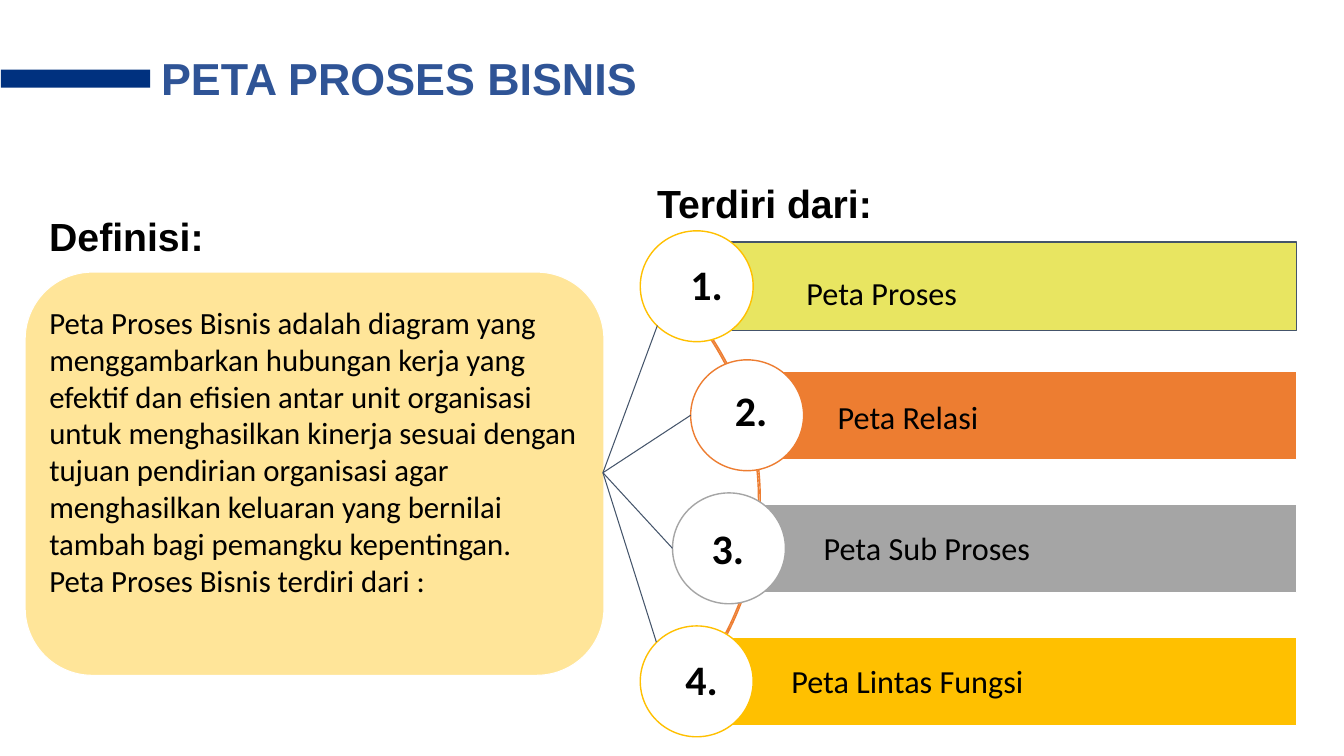
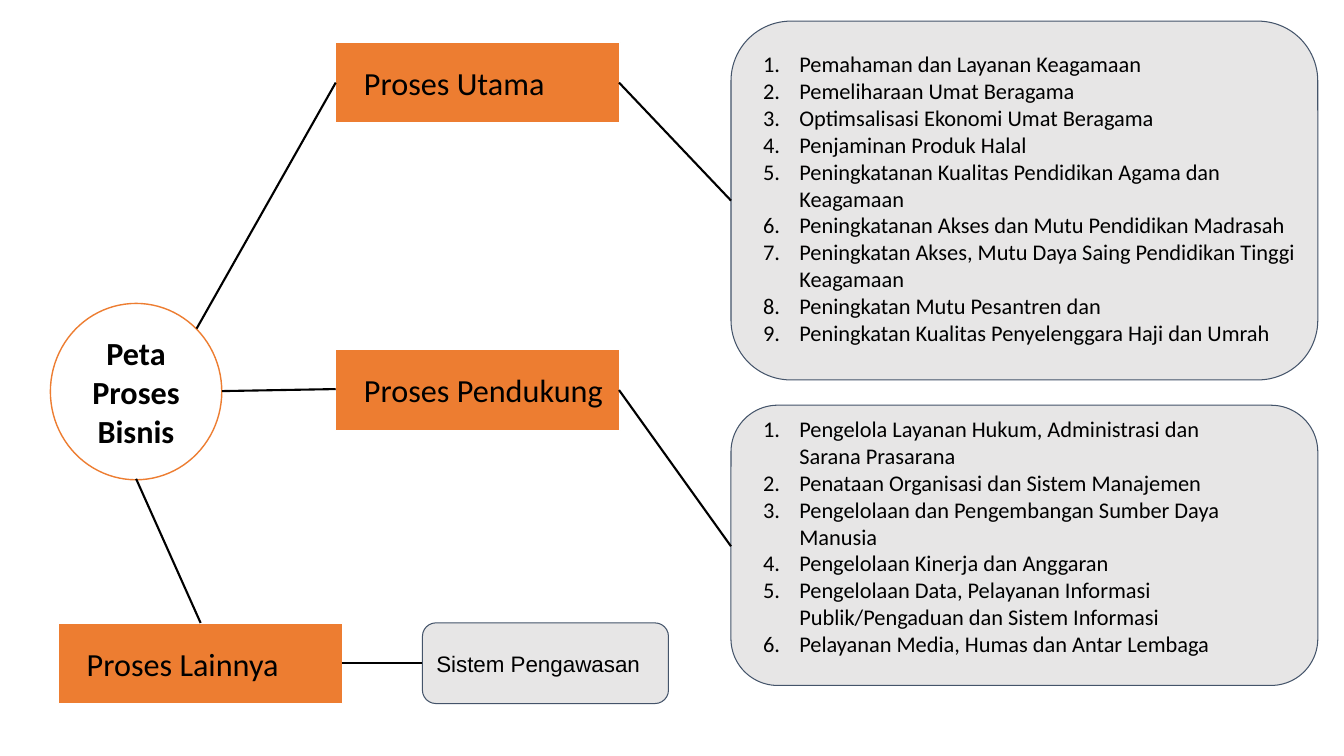
from dataclasses import dataclass
from typing import Optional

from lxml.etree import SubElement
from pptx import Presentation
from pptx.dml.color import RGBColor
from pptx.enum.shapes import MSO_CONNECTOR, MSO_SHAPE
from pptx.enum.text import MSO_ANCHOR, PP_ALIGN
from pptx.oxml.ns import qn
from pptx.shapes.autoshape import Shape
from pptx.slide import Slide
from pptx.util import Emu, Pt

PX = 9144  # EMU in one px, 100 px to the inch
WIDTH, HEIGHT = 1333, 750

BLACK, WHITE = "000000", "FFFFFF"
TITLE_BLUE, BAND_BLUE, SLATE = "2F5496", "00317F", "44546A"
ORANGE, GREY, GOLD, LIME = "ED7D31", "A5A5A5", "FFC000", "E8E561"
CREAM, PALE = "FFE599", "E7E6E6"

Box = tuple[int, int, int, int]
Point = tuple[int, int]


@dataclass(frozen=True)
class Style:
    size: int
    font: str = "Calibri"
    bold: bool = False
    colour: str = BLACK


TITLE = Style(32, "Arial", True, TITLE_BLUE)
HEADING = Style(28, "Arial", True)
NUMBER = Style(30, bold=True)
LABEL = Style(23)
CENTRE = Style(23, bold=True)
DEFINITION = Style(22)
LISTED = Style(16)
SUPERVISION = Style(16, "Arial")


@dataclass(frozen=True)
class MapKind:
    label: str
    fill: str
    edge: str
    ring: str
    top: int
    circle_left: int
    label_at: Point
    number_at: Point
    spoke_end: Point


MAP_KINDS = [
    MapKind("Peta Proses", LIME, SLATE, GOLD, 240, 635, (790, 261), (675, 246), (652, 323)),
    MapKind("Peta Relasi", ORANGE, WHITE, ORANGE, 368, 685, (821, 384), (719, 371), (685, 412)),
    MapKind("Peta Sub Proses", GREY, WHITE, GREY, 500, 667, (807, 514), (696, 508), (667, 544)),
    MapKind("Peta Lintas Fungsi", GOLD, WHITE, GOLD, 632, 635, (775, 646), (670, 638), (651, 637)),
]
BAR_RIGHT, BAR_HEIGHT = 1286, 88
CIRCLE_W, CIRCLE_H = 112, 110


@dataclass(frozen=True)
class Process:
    label: str
    left: int
    top: int


PROCESSES = [
    Process("Proses Utama", 333, 42),
    Process("Proses Pendukung", 333, 347),
    Process("Proses Lainnya", 58, 618),
]
PROCESS_W, PROCESS_H = 282, 80


@dataclass(frozen=True)
class Panel:
    outline: Box
    text_area: Box
    entries: list[str]


PANELS = [
    Panel((725, 21, 582, 356), (733, 40, 582, 316), [
        "Pemahaman dan Layanan Keagamaan",
        "Pemeliharaan Umat Beragama",
        "Optimsalisasi Ekonomi Umat Beragama",
        "Penjaminan Produk Halal",
        "Peningkatanan Kualitas Pendidikan Agama dan Keagamaan",
        "Peningkatanan Akses dan Mutu Pendidikan Madrasah",
        "Peningkatan Akses, Mutu Daya Saing Pendidikan Tinggi Keagamaan",
        "Peningkatan Mutu Pesantren dan",
        "Peningkatan Kualitas Penyelenggara Haji dan Umrah",
    ]),
    Panel((725, 402, 582, 278), (733, 402, 530, 263), [
        "Pengelola Layanan Hukum, Administrasi dan Sarana Prasarana",
        "Penataan Organisasi dan Sistem Manajemen",
        "Pengelolaan dan Pengembangan Sumber Daya Manusia",
        "Pengelolaan Kinerja dan Anggaran",
        "Pengelolaan Data, Pelayanan Informasi Publik/Pengaduan dan Sistem Informasi",
        "Pelayanan Media, Humas dan Antar Lembaga",
    ]),
]
BRANCHES: list[tuple[Point, Point]] = [
    ((333, 82), (195, 326)),
    ((220, 388), (333, 386)),
    ((135, 475), (199, 618)),
    ((614, 82), (725, 199)),
    ((614, 387), (725, 542)),
    ((339, 658), (419, 658)),
]


def px(length: int) -> Emu:
    return Emu(length * PX)


def rgb(colour: str) -> RGBColor:
    return RGBColor.from_string(colour)


def add_block(slide: Slide, preset: MSO_SHAPE, box: Box, fill: Optional[str],
              edge: Optional[str] = None, weight: float = 1) -> Shape:
    """Draw a preset shape; None leaves out its fill or its edge."""
    block = slide.shapes.add_shape(preset, *map(px, box))
    block.shadow.inherit = False
    if fill:
        block.fill.solid()
        block.fill.fore_color.rgb = rgb(fill)
    else:
        block.fill.background()
    if edge:
        block.line.color.rgb = rgb(edge)
        block.line.width = Pt(weight)
    else:
        block.line.fill.background()
    return block


def write(block: Shape, lines: list[str], style: Style, *,
          anchor: MSO_ANCHOR = MSO_ANCHOR.MIDDLE, align: PP_ALIGN = PP_ALIGN.LEFT,
          left_inset: int = 10, inset: int = 10,
          first_indent: int = 0, numbered: bool = False) -> None:
    frame = block.text_frame
    frame.word_wrap = True
    frame.vertical_anchor = anchor
    frame.margin_left = px(left_inset)
    frame.margin_right = px(10)
    frame.margin_top = frame.margin_bottom = px(inset)
    for index, line in enumerate(lines):
        paragraph = frame.add_paragraph() if index else frame.paragraphs[0]
        paragraph.text = line
        paragraph.alignment = align
        properties = paragraph._p.get_or_add_pPr()
        if numbered:
            properties.set("marL", str(px(50)))
            properties.set("indent", str(px(-36)))
            SubElement(properties, qn("a:buAutoNum"), type="arabicPeriod")
        elif first_indent:
            properties.set("marL", "0")
            properties.set("indent", str(px(first_indent)))
        font = paragraph.font
        font.name, font.size, font.bold = style.font, Pt(style.size), style.bold
        font.color.rgb = rgb(style.colour)


def add_text(slide: Slide, box: Box, lines: list[str], style: Style, *,
             anchor: MSO_ANCHOR = MSO_ANCHOR.TOP, inset: int = 10,
             numbered: bool = False) -> None:
    write(slide.shapes.add_textbox(*map(px, box)), lines, style,
          anchor=anchor, inset=inset, numbered=numbered)


def add_line(slide: Slide, start: Point, end: Point, colour: str, weight: float) -> None:
    line = slide.shapes.add_connector(MSO_CONNECTOR.STRAIGHT, *map(px, start + end))
    line.line.color.rgb = rgb(colour)
    line.line.width = Pt(weight)
    SubElement(line._element.spPr, qn("a:effectLst"))


def add_title(slide: Slide, title: str) -> None:
    """Draw the title area and the dark band leading into it."""
    area = add_block(slide, MSO_SHAPE.RECTANGLE, (0, -13, WIDTH, 179), WHITE, WHITE, 0.75)
    write(area, [title], TITLE, first_indent=150)
    add_block(slide, MSO_SHAPE.RECTANGLE, (1, 69, 148, 18), BAND_BLUE)


def add_map_kind(slide: Slide, kind: MapKind) -> None:
    bar_left = kind.circle_left + CIRCLE_W // 2
    add_block(slide, MSO_SHAPE.RECTANGLE,
              (bar_left, kind.top, BAR_RIGHT - bar_left, BAR_HEIGHT), kind.fill, kind.edge)
    circle_top = kind.top - (CIRCLE_H - BAR_HEIGHT) // 2
    add_block(slide, MSO_SHAPE.OVAL,
              (kind.circle_left, circle_top, CIRCLE_W, CIRCLE_H), WHITE, kind.ring)
    add_text(slide, (*kind.label_at, 341, 59), [kind.label], LABEL, anchor=MSO_ANCHOR.MIDDLE)


def build_definition(slide: Slide) -> None:
    add_block(slide, MSO_SHAPE.ROUNDED_RECTANGLE, (25, 270, 574, 400), CREAM, WHITE, 0.75)
    add_title(slide, "PETA PROSES BISNIS")
    add_text(slide, (39, 291, 559, 357), [
        "Peta Proses Bisnis adalah diagram yang menggambarkan hubungan kerja yang efektif "
        "dan efisien antar unit organisasi untuk menghasilkan kinerja sesuai dengan tujuan "
        "pendirian organisasi agar menghasilkan keluaran yang bernilai tambah bagi "
        "pemangku kepentingan.",
        "Peta Proses Bisnis terdiri dari :",
    ], DEFINITION)

    arc = add_block(slide, MSO_SHAPE.BLOCK_ARC, (149, 199, 605, 592), None, ORANGE)
    for index, value in enumerate((192.04, 27, 0.003)):
        arc.adjustments[index] = value
    for number, kind in enumerate(MAP_KINDS, 1):
        add_map_kind(slide, kind)
        add_text(slide, (*kind.number_at, 63, 71), [f"{number}."], NUMBER)
        add_line(slide, (598, 469), kind.spoke_end, SLATE, 0.75)

    add_text(slide, (39, 206, 283, 57), ["Definisi:"], HEADING, inset=5)
    add_text(slide, (642, 173, 247, 57), ["Terdiri dari:"], HEADING, inset=5)


def build_process_tree(slide: Slide) -> None:
    for process in PROCESSES:
        block = add_block(slide, MSO_SHAPE.RECTANGLE,
                          (process.left, process.top, PROCESS_W, PROCESS_H), ORANGE, WHITE)
        write(block, [process.label], LABEL, left_inset=28)
    root = add_block(slide, MSO_SHAPE.OVAL, (50, 301, 170, 175), WHITE, ORANGE)
    write(root, ["Peta Proses Bisnis"], CENTRE, align=PP_ALIGN.CENTER)

    for panel in PANELS:
        add_block(slide, MSO_SHAPE.ROUNDED_RECTANGLE, panel.outline, PALE, SLATE, 0.75)
        add_text(slide, panel.text_area, panel.entries, LISTED, numbered=True)
    supervision = add_block(slide, MSO_SHAPE.ROUNDED_RECTANGLE,
                            (419, 618, 244, PROCESS_H), PALE, SLATE, 0.75)
    write(supervision, ["Sistem Pengawasan"], SUPERVISION)

    for start, end in BRANCHES:
        add_line(slide, start, end, BLACK, 1.5)


def main() -> None:
    deck = Presentation()
    deck.slide_width, deck.slide_height = px(WIDTH), px(HEIGHT)
    blank = deck.slide_layouts[6]
    for build in (build_definition, build_process_tree):
        build(deck.slides.add_slide(blank))
    deck.save("out.pptx")


if __name__ == "__main__":
    main()
